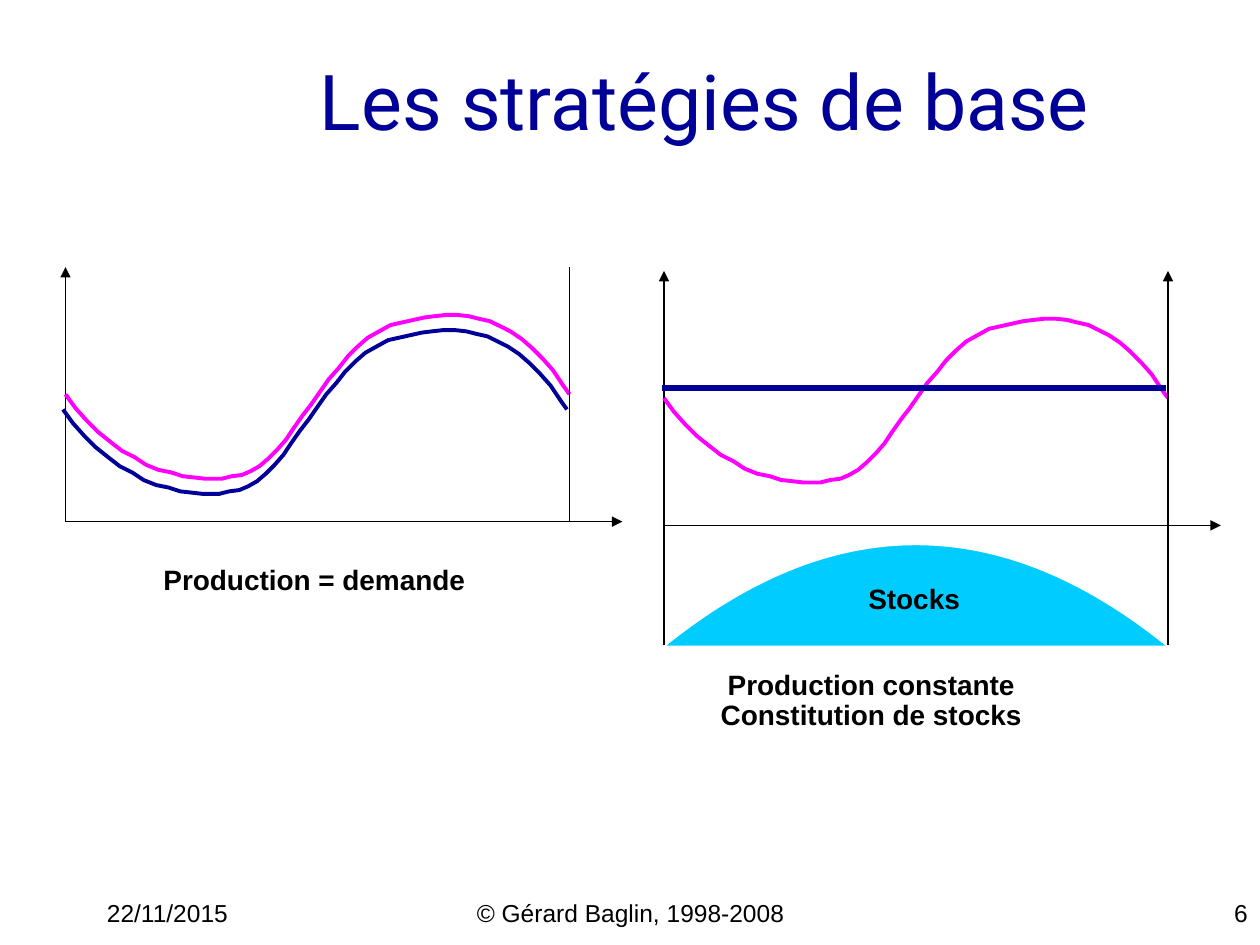
import pptx
import pptx.util
import pptx.dml.color
import pptx.enum.shapes
import pptx.enum.text
import pptx.oxml.ns
import pptx.oxml.xmlchemy

Inches = pptx.util.Inches
ALIGN = pptx.enum.text.PP_ALIGN
BLACK, WHITE, NAVY, PINK, CYAN = "000000", "FFFFFF", "000099", "FF00FF", "00CCFF"
PERIOD = 4

DEMAND = [
    (0, 0), (0.08, 0.11), (0.17, 0.21), (0.26, 0.3), (0.36, 0.38), (0.45, 0.45),
    (0.55, 0.5), (0.64, 0.56), (0.74, 0.6), (0.84, 0.62), (0.93, 0.65), (1.02, 0.66),
    (1.11, 0.67), (1.24, 0.67), (1.32, 0.65), (1.4, 0.64), (1.47, 0.61), (1.54, 0.57),
    (1.61, 0.51), (1.68, 0.44), (1.75, 0.36), (1.81, 0.27), (1.88, 0.17), (1.95, 0.08),
    (2.02, -0.02), (2.09, -0.12), (2.17, -0.21), (2.24, -0.3), (2.32, -0.38),
    (2.4, -0.45), (2.49, -0.5), (2.58, -0.55), (2.67, -0.57), (2.76, -0.59),
    (2.85, -0.61), (2.93, -0.62), (3.02, -0.63), (3.11, -0.63), (3.2, -0.62),
    (3.28, -0.6), (3.37, -0.58), (3.45, -0.54), (3.53, -0.5), (3.62, -0.44),
    (3.7, -0.37), (3.79, -0.28), (3.87, -0.19), (3.95, -0.07), (4, 0),
]


def rgb(color):
    return pptx.dml.color.RGBColor.from_string(color)


def set_line(shape, color, width):
    shape.line.color.rgb = rgb(color)
    shape.line.width = pptx.util.Pt(width)


def add_run(para, text, size, color=BLACK, font="Arial", bold=False):
    span = para.add_run()
    span.text = text
    span.font.name = font
    span.font.size = pptx.util.Pt(size)
    span.font.bold = bold
    span.font.color.rgb = rgb(color)


def add_title(page, text):
    title = page.shapes.title
    title.left, title.top = Inches(0.25), Inches(0.17)
    title.width, title.height = Inches(8.5), Inches(1.25)
    frame = title.text_frame
    frame.auto_size = pptx.enum.text.MSO_AUTO_SIZE.NONE
    frame.vertical_anchor = pptx.enum.text.MSO_ANCHOR.MIDDLE
    para = frame.paragraphs[0]
    para.alignment = ALIGN.RIGHT
    add_run(para, text, 44, NAVY, "Roboto")


def add_footer(page, left, width, text, align):
    box = page.shapes.add_textbox(Inches(left), Inches(7.08), Inches(width), Inches(0.25))
    box.text_frame.word_wrap = True
    para = box.text_frame.paragraphs[0]
    para.alignment = align
    add_run(para, text, 14)


def add_label(page, left, top, width, height, lines, outlined=True):
    place = [Inches(value) for value in (left, top, width, height)]
    if outlined:
        box = page.shapes.add_shape(pptx.enum.shapes.MSO_SHAPE.RECTANGLE, *place)
        box.shadow.inherit = False
        box.fill.background()
        set_line(box, WHITE, 1)
    else:
        box = page.shapes.add_textbox(*place)
    frame = box.text_frame
    frame.word_wrap = False
    frame.auto_size = pptx.enum.text.MSO_AUTO_SIZE.SHAPE_TO_FIT_TEXT
    for index, text in enumerate(lines):
        para = frame.add_paragraph() if index else frame.paragraphs[0]
        para.alignment = ALIGN.CENTER
        para.line_spacing = 0.9
        add_run(para, text, 16, bold=True)


def add_line(page, start, end, color=BLACK, width=1, arrow=False):
    line = page.shapes.add_connector(
        pptx.enum.shapes.MSO_CONNECTOR.STRAIGHT,
        *[Inches(value) for value in start + end])
    set_line(line, color, width)
    properties = line._element.find(pptx.oxml.ns.qn("p:spPr"))
    if arrow:
        tail = pptx.oxml.xmlchemy.OxmlElement("a:tailEnd")
        tail.set("type", "triangle")
        properties.find(pptx.oxml.ns.qn("a:ln")).append(tail)
    properties.append(pptx.oxml.xmlchemy.OxmlElement("a:effectLst"))


def add_outline(page, points, color, width, fill=None):
    corners = [(Inches(x), Inches(y)) for x, y in points]
    builder = page.shapes.build_freeform(*corners[0])
    builder.add_line_segments(corners[1:], close=fill is not None)
    shape = builder.convert_to_shape()
    shape.shadow.inherit = False
    set_line(shape, color, width)
    if fill:
        shape.fill.solid()
        shape.fill.fore_color.rgb = rgb(fill)
    else:
        shape.fill.background()


def add_demand(page, left, start, color):
    add_outline(page, [(left + x, start + y) for x, y in DEMAND], color, 2.25)


def add_plot(page, left, base, end_arrow):
    right, top = left + PERIOD, base - 2.02
    add_line(page, (left, base), (left, top), arrow=True)
    add_line(page, (left, base), (left + 4.42, base), arrow=True)
    add_demand(page, left, base - 1.01, PINK)
    add_line(page, (right, base), (right, top), arrow=end_arrow)


def add_stocks(page, left, base, height):
    steps = 64
    arch = [(left + PERIOD * step / steps,
             base - height * (1 - (2 * step / steps - 1) ** 2))
            for step in range(steps + 1)]
    add_outline(page, arch, WHITE, 1, CYAN)
    for x in (left, left + PERIOD):
        add_line(page, (x, 4.14), (x, 5.12))


def main():
    deck = pptx.Presentation()
    deck.slide_width, deck.slide_height = Inches(10), Inches(7.5)
    page = deck.slides.add_slide(deck.slide_layouts[5])
    add_title(page, "Les stratégies de base")
    add_footer(page, 0.75, 2.08, "22/11/2015", ALIGN.LEFT)
    add_footer(page, 3.42, 3.17, "© Gérard Baglin, 1998-2008", ALIGN.CENTER)
    add_footer(page, 7.92, 2.08, "6", ALIGN.RIGHT)
    add_plot(page, 5.27, 4.17, True)
    add_plot(page, 0.52, 4.14, False)
    add_stocks(page, 5.27, 5.13, 0.81)
    add_label(page, 1.19, 4.44, 2.61, 0.35, ["Production = demande"])
    add_label(page, 5.61, 5.27, 2.61, 0.59,
              ["Production constante", "Constitution de stocks"])
    add_label(page, 6.79, 4.6, 0.93, 0.34, ["Stocks"], outlined=False)
    add_line(page, (5.25, 3.08), (9.25, 3.08), NAVY, 3)
    add_demand(page, 0.5, 3.25, NAVY)
    deck.save("out.pptx")


if __name__ == "__main__":
    main()
